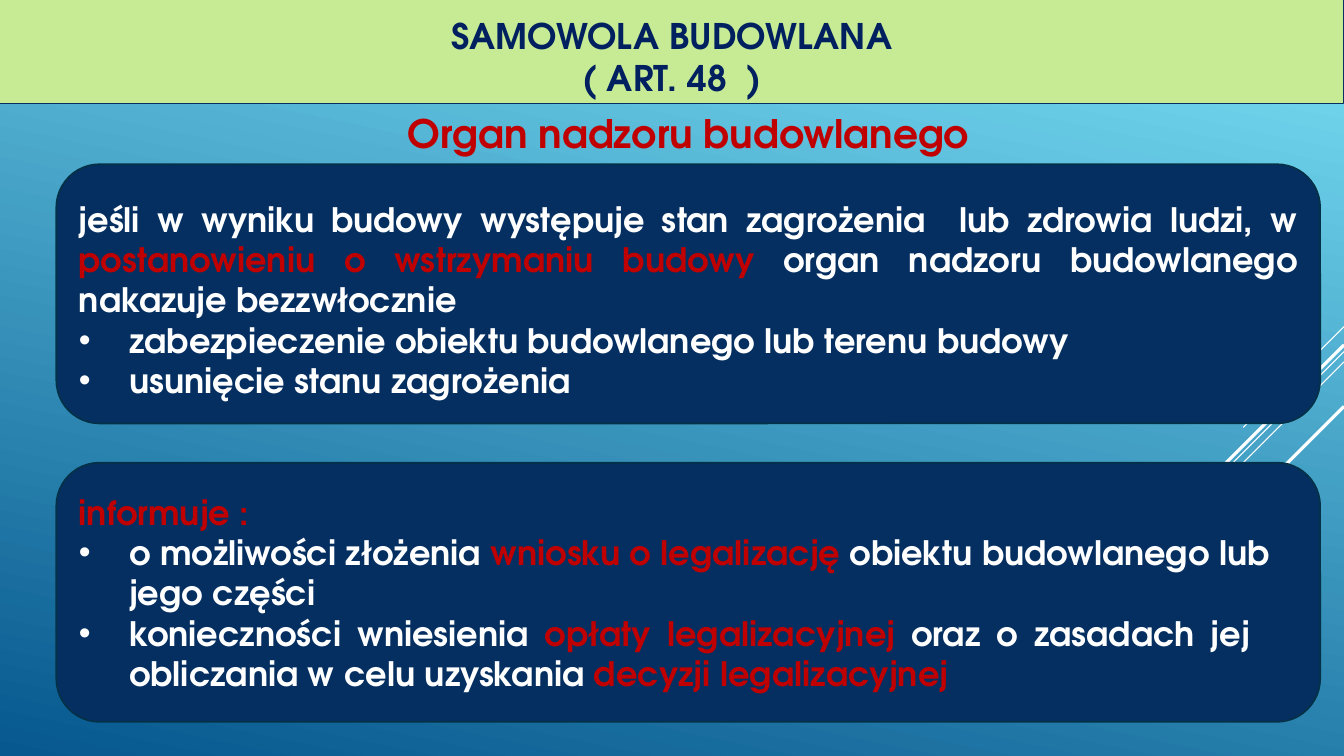
from lxml import etree
from pptx import Presentation
from pptx import util as u
from pptx.dml.color import RGBColor
from pptx.enum import shapes, text
from pptx.oxml import ns

FONT = "TeX Gyre Adventor"
COLORS = {
    "sky": "6ED2EB", "sea": "06588E", "lime": "C7EA94", "title": "002060",
    "navy": "052F61", "outline": "043148", "red": "C00000", "white": "FFFFFF",
}
SLIDE_WIDTH, SLIDE_HEIGHT = 33.87, 19.05
PANEL_LEFT, PANEL_WIDTH, PANEL_HEIGHT = 1.42, 31.85, 6.53
BULLET_INDENT = 1.27
RAYS = [(8.23, 2.54, 0.75), (8.86, 8.28, 0.75), (9.12, 5.26, 0.75),
        (8.69, 4.85, 2.25), (10.24, 3.53, 2.25)]

JUSTIFY, LEFT, CENTER = (text.PP_ALIGN.JUSTIFY, text.PP_ALIGN.LEFT,
                         text.PP_ALIGN.CENTER)
ORDER = [
    (JUSTIFY, False, 0, [
        ("jeśli w wyniku budowy występuje stan zagrożenia  lub zdrowia ludzi, w ", "white"),
        ("postanowieniu o wstrzymaniu budowy ", "red"),
        ("organ nadzoru budowlanego nakazuje bezzwłocznie", "white")]),
    (JUSTIFY, True, 0, [("zabezpieczenie obiektu budowlanego lub terenu budowy", "white")]),
    (JUSTIFY, True, 0, [("usunięcie stanu zagrożenia", "white")]),
]
INFORMATION = [
    (JUSTIFY, False, 0, [("informuje :", "red")]),
    (LEFT, True, 0, [
        ("o możliwości złożenia ", "white"),
        ("wniosku o legalizację ", "red"),
        ("obiektu budowlanego lub jego części", "white")]),
    (JUSTIFY, True, 1.2, [
        ("konieczności wniesienia ", "white"),
        ("opłaty legalizacyjnej ", "red"),
        ("oraz o zasadach jej obliczania w celu uzyskania ", "white"),
        ("decyzji legalizacyjnej", "red")]),
]


def color(name):
    """Return the named colour."""
    return RGBColor.from_string(COLORS[name])


def add_run(paragraph, words, size, color_name):
    """Append a bold run to the paragraph."""
    run = paragraph.add_run()
    run.text = words
    run.font.name = FONT
    run.font.size = u.Pt(size)
    run.font.bold = True
    run.font.color.rgb = color(color_name)


def add_bullet(paragraph):
    """Give the paragraph a hanging bullet."""
    properties = paragraph._p.get_or_add_pPr()
    properties.set("marL", str(u.Cm(BULLET_INDENT)))
    properties.set("indent", str(-u.Cm(BULLET_INDENT)))
    bullet_font = etree.SubElement(properties, ns.qn("a:buFont"))
    bullet_font.set("typeface", "Arial")
    etree.SubElement(properties, ns.qn("a:buChar")).set("char", "•")


def add_box(slide, kind, box, fill, line, line_width):
    """Draw a filled shape in the box and return it."""
    shape = slide.shapes.add_shape(kind, *map(u.Cm, box))
    shape.shadow.inherit = False
    shape.fill.solid()
    shape.fill.fore_color.rgb = color(fill)
    shape.line.color.rgb = color(line)
    shape.line.width = u.Pt(line_width)
    shape.text_frame.word_wrap = True
    return shape


def add_background(slide):
    """Fill the background with the blue gradient."""
    fill = slide.background.fill
    fill.gradient()
    fill.gradient_angle = 258
    for stop, position, name in zip(fill.gradient_stops, (0.1, 1), ("sky", "sea")):
        stop.position = position
        stop.color.rgb = color(name)


def add_rays(slide, right):
    """Draw the diagonal lines that start at the right edge."""
    for top, run, width in RAYS:
        ray = slide.shapes.add_connector(
            shapes.MSO_CONNECTOR.STRAIGHT,
            *map(u.Cm, (right, top, right - run, top + run)))
        ray.line.color.rgb = color("white")
        ray.line.width = u.Pt(width)
        etree.SubElement(ray._element.spPr, ns.qn("a:effectLst"))


def add_title(slide, box):
    """Place the two-line title band."""
    shape = add_box(slide, shapes.MSO_SHAPE.RECTANGLE, box, "lime", "navy", 0.75)
    frame = shape.text_frame
    frame.vertical_anchor = text.MSO_ANCHOR.BOTTOM
    for index, words in enumerate(("SAMOWOLA BUDOWLANA", "( ART. 48  )")):
        paragraph = frame.add_paragraph() if index else frame.paragraphs[0]
        paragraph.alignment = CENTER
        add_run(paragraph, words, 25.2, "title")


def add_heading(slide, box):
    """Place the red heading above the panels."""
    frame = slide.shapes.add_textbox(*map(u.Cm, box)).text_frame
    frame.word_wrap = True
    paragraph = frame.paragraphs[0]
    paragraph.alignment = CENTER
    add_run(paragraph, "Organ nadzoru budowlanego", 28, "red")


def add_panel(slide, box, paragraphs, top_margin):
    """Place a rounded panel with its paragraphs."""
    shape = add_box(slide, shapes.MSO_SHAPE.ROUNDED_RECTANGLE, box,
                    "navy", "outline", 1.25)
    frame = shape.text_frame
    frame.vertical_anchor = text.MSO_ANCHOR.MIDDLE
    frame.margin_top = u.Cm(top_margin)
    for index, (alignment, bulleted, right_indent, runs) in enumerate(paragraphs):
        paragraph = frame.add_paragraph() if index else frame.paragraphs[0]
        paragraph.alignment = alignment
        if bulleted:
            add_bullet(paragraph)
        if right_indent:
            paragraph._p.get_or_add_pPr().set("marR", str(u.Cm(right_indent)))
        for words, color_name in runs:
            add_run(paragraph, words, 24, color_name)


def main():
    """Build the slide and save it."""
    presentation = Presentation()
    presentation.slide_width = u.Cm(SLIDE_WIDTH)
    presentation.slide_height = u.Cm(SLIDE_HEIGHT)
    slide = presentation.slides.add_slide(presentation.slide_layouts[6])
    add_background(slide)
    add_rays(slide, SLIDE_WIDTH)
    add_title(slide, (0, 0, SLIDE_WIDTH, 2.62))
    add_heading(slide, (PANEL_LEFT, 2.62, PANEL_WIDTH, 1.5))
    add_panel(slide, (PANEL_LEFT, 4.14, PANEL_WIDTH, PANEL_HEIGHT), ORDER, 0.4)
    add_panel(slide, (PANEL_LEFT, 11.66, PANEL_WIDTH, PANEL_HEIGHT), INFORMATION, 0.13)
    presentation.save("out.pptx")


if __name__ == "__main__":
    main()
